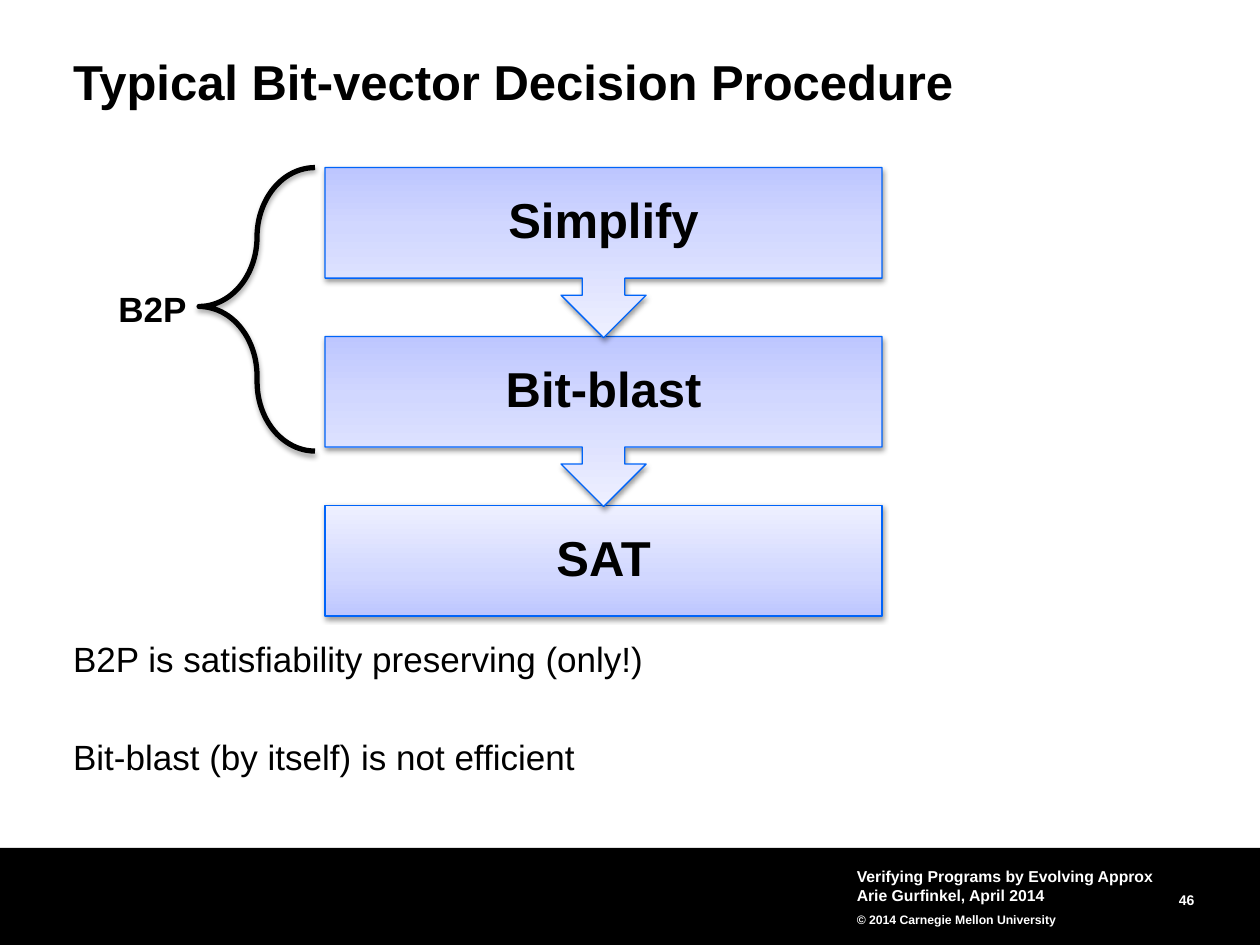
from copy import deepcopy
from dataclasses import dataclass

from lxml import etree
from pptx import Presentation
from pptx.dml.color import RGBColor
from pptx.enum import shapes, text
from pptx.oxml import ns
from pptx.util import Inches, Pt


@dataclass(frozen=True)
class Theme:
    font: str = "Arial"
    ink: str = "000000"
    paper: str = "FFFFFF"
    edge: str = "0064F9"
    gradient: tuple = ((0, "BDC6FF"), (0.35, "D1D7FF"), (1, "EEF0FF"))
    heading: int = 28
    body: int = 20
    footer: int = 9
    number: int = 8
    copyright: int = 7


T = Theme()
LEFT, RIGHT, CENTER = text.PP_ALIGN.LEFT, text.PP_ALIGN.RIGHT, text.PP_ALIGN.CENTER
TOP, MIDDLE = text.MSO_ANCHOR.TOP, text.MSO_ANCHOR.MIDDLE
SHAPE = shapes.MSO_SHAPE

# Stages of the flow
STAGE_X, STAGE_Y, STAGE_W, STAGE_H = 2.58, 1.33, 4.42, 0.88
STAGE_STEP, CALLOUT_H = 1.34, 1.35


def box(at):
    return [Inches(v) for v in at]


def write(sp, lines, size=T.body, bold=False, color=T.ink, align=LEFT,
          anchor=TOP, inset=0, spacing=None, after=None, wrap=True):
    """Fill a shape with paragraphs; a line is a string or (string, size, spacing)."""
    tf = sp.text_frame
    tf.auto_size = text.MSO_AUTO_SIZE.NONE
    tf.word_wrap, tf.vertical_anchor = wrap, anchor
    tf.margin_left = tf.margin_right = Inches(inset)
    tf.margin_top = tf.margin_bottom = Inches(inset)
    for i, line in enumerate(lines):
        words, pts, leading = (line, size, spacing) if isinstance(line, str) else line
        p = tf.paragraphs[0] if i == 0 else tf.add_paragraph()
        p.alignment, p.line_spacing = align, leading
        p.space_before = Pt(0)
        if after and i < len(lines) - 1:
            p.space_after = Pt(after)
        r = p.add_run()
        r.text = words
        r.font.name, r.font.size, r.font.bold = T.font, Pt(pts), bold
        r.font.color.rgb = RGBColor.from_string(color)


def add_label(s, at, lines, **fmt):
    write(s.shapes.add_textbox(*box(at)), lines, **fmt)


def fill_placeholder(sp, at, lines, **fmt):
    sp.left, sp.top, sp.width, sp.height = box(at)
    write(sp, lines, **fmt)


def remove_bullets(sp):
    for p in sp.text_frame.paragraphs:
        pPr = p._p.get_or_add_pPr()
        pPr.set("marL", "0")
        pPr.set("indent", "0")
        etree.SubElement(pPr, ns.qn("a:buNone"))


def add_shape(s, kind, at, line=None, width=0.75):
    sp = s.shapes.add_shape(kind, *box(at))
    sp.shadow.inherit = False
    if line:
        sp.line.color.rgb = RGBColor.from_string(line)
        sp.line.width = Pt(width)
    else:
        sp.line.fill.background()
    return sp


def add_shadow(sp, alpha, distance):
    effects = sp._element.spPr.find(ns.qn("a:effectLst"))
    shadow = etree.SubElement(
        effects, ns.qn("a:outerShdw"), blurRad=str(Pt(3.1)),
        dist=str(Pt(distance)), dir="5400000", rotWithShape="0")
    color = etree.SubElement(shadow, ns.qn("a:srgbClr"), val=T.ink)
    etree.SubElement(color, ns.qn("a:alpha"), val=str(alpha * 1000))


def add_gradient(sp):
    sp.fill.gradient()
    stops = sp._element.spPr.find(".//" + ns.qn("a:gsLst"))
    stops.append(deepcopy(stops[0]))
    for stop, (position, color) in zip(sp.fill.gradient_stops, T.gradient):
        stop.position = position
        stop.color.rgb = RGBColor.from_string(color)
    sp.fill.gradient_angle = 90


def add_stage(s, index, name, last):
    top = STAGE_Y + index * STAGE_STEP
    kind = SHAPE.RECTANGLE if last else SHAPE.UP_ARROW_CALLOUT
    height = STAGE_H if last else CALLOUT_H
    sp = add_shape(s, kind, (STAGE_X, top, STAGE_W, height), T.edge)
    add_gradient(sp)
    add_shadow(sp, 38, 1.6)
    # The callout is turned over, so its name stands in an upright label
    if not last:
        sp.rotation = 180
        sp = s.shapes.add_textbox(*box((STAGE_X, top, STAGE_W, STAGE_H)))
    write(sp, [name], size=T.heading, bold=True, align=CENTER,
          anchor=MIDDLE, inset=0.22, spacing=0.9)


def add_brace(s):
    brace = add_shape(s, SHAPE.LEFT_BRACE, (1.58, STAGE_Y, 0.92, 2.25), T.ink, 3)
    brace.fill.background()
    brace.adjustments[0], brace.adjustments[1] = 0.62, 0.49
    add_shadow(brace, 35, 1.8)
    add_label(s, (0.84, 2.23, 0.74, 0.44), ["B2P"], bold=True, align=CENTER,
              anchor=MIDDLE, inset=0.05, wrap=False)


def add_footer(s):
    band = add_shape(s, SHAPE.RECTANGLE, (0, 6.73, 10, 0.77))
    band.fill.solid()
    band.fill.fore_color.rgb = RGBColor.from_string(T.ink)
    add_label(s, (8.56, 7.03, 0.92, 0.18), ["46"], size=T.number, bold=True,
              color=T.paper, align=RIGHT, anchor=MIDDLE, spacing=Pt(13))
    add_label(s, (6.75, 6.83, 2.5, 0.58),
              ["Verifying Programs by Evolving Approx",
               "Arie Gurfinkel, April 2014",
               ("© 2014 Carnegie Mellon University", T.copyright, 1.5)],
              size=T.footer, bold=True, color=T.paper, anchor=MIDDLE, inset=0.05)


def main():
    prs = Presentation()
    prs.slide_width, prs.slide_height = Inches(10), Inches(7.5)
    s = prs.slides.add_slide(prs.slide_layouts[1])

    # Title and remarks
    fill_placeholder(s.shapes.title, (0.58, 0.46, 8.92, 0.43),
                     ["Typical Bit-vector Decision Procedure"],
                     size=T.heading, bold=True, spacing=0.9)
    body = s.placeholders[1]
    fill_placeholder(body, (0.58, 5.08, 8.92, 1.58),
                     ["B2P is satisfiability preserving (only!)",
                      "Bit-blast (by itself) is not efficient"],
                     spacing=0.95, after=33.5)
    remove_bullets(body)

    # Flow, drawn from the bottom so that each arrow tip lies on the next stage
    stages = ["Simplify", "Bit-blast", "SAT"]
    for i in reversed(range(len(stages))):
        add_stage(s, i, stages[i], last=i == len(stages) - 1)
    add_brace(s)

    add_footer(s)
    prs.save("out.pptx")


if __name__ == "__main__":
    main()
